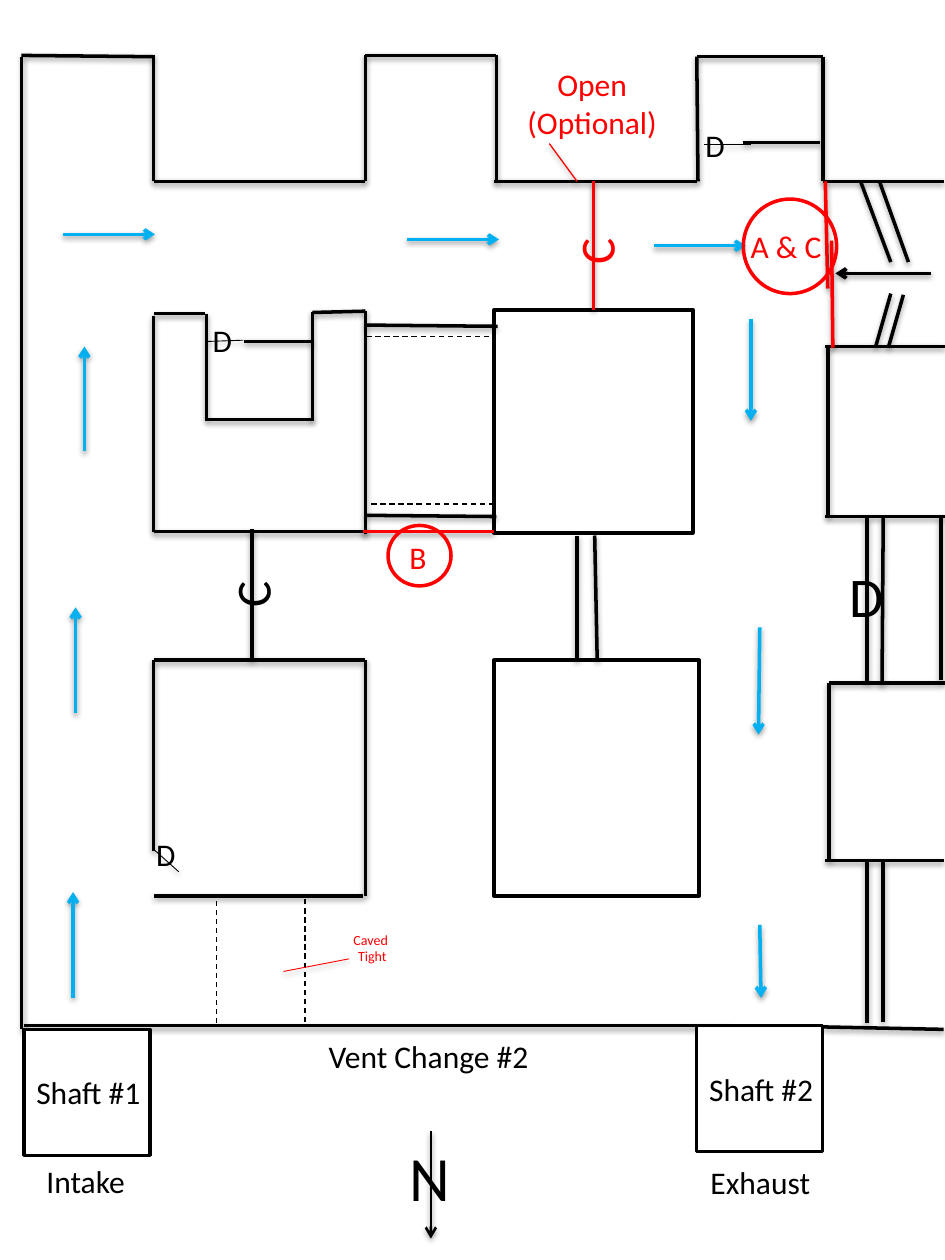
import itertools
import pptx
import pptx.util
import pptx.dml.color
import pptx.enum.dml
import pptx.enum.shapes
import pptx.enum.text
import pptx.oxml
import pptx.oxml.ns
from pptx.util import Inches

BLACK = pptx.dml.color.RGBColor(0, 0, 0)
WHITE = pptx.dml.color.RGBColor(255, 255, 255)
RED = pptx.dml.color.RGBColor(255, 0, 0)
BLUE = pptx.dml.color.RGBColor(0, 176, 240)
KIND = pptx.enum.shapes.MSO_SHAPE
ALIGN = pptx.enum.text.PP_ALIGN
NS = pptx.oxml.ns.nsdecls("a")
SHADOW = (f'<a:effectLst {NS}><a:outerShdw blurRad="40000" dist="20000" '
          'dir="5400000" rotWithShape="0"><a:srgbClr val="000000">'
          '<a:alpha val="38000"/></a:srgbClr></a:outerShdw></a:effectLst>')
PLAIN = f"<a:effectLst {NS}/>"
ARROW = f'<a:tailEnd {NS} type="arrow"/>'


class Plan:
    font = "Calibri"
    weight = 2

    def __init__(self, slide):
        self.slide = slide

    def line(self, start, end, color=BLACK, width=weight, arrow=False, dash=False):
        item = self.slide.shapes.add_connector(
            pptx.enum.shapes.MSO_CONNECTOR.STRAIGHT,
            *(Inches(n) for n in (*start, *end)))
        item.line.color.rgb = color
        item.line.width = pptx.util.Pt(width)
        if dash:
            item.line.dash_style = pptx.enum.dml.MSO_LINE.DASH
        props = item.element.spPr
        if arrow:
            props.find(pptx.oxml.ns.qn("a:ln")).append(pptx.oxml.parse_xml(ARROW))
        props.append(pptx.oxml.parse_xml(PLAIN if dash else SHADOW))

    def wall(self, *points):
        """Draw one line between each point and the next."""
        for start, end in itertools.pairwise(points):
            self.line(start, end)

    def shape(self, kind, box, color, fill=None):
        item = self.slide.shapes.add_shape(kind, *map(Inches, box))
        item.shadow.inherit = False
        if fill is None:
            item.fill.background()
        else:
            item.fill.solid()
            item.fill.fore_color.rgb = fill
        item.line.color.rgb = color
        item.line.width = pptx.util.Pt(self.weight)
        return item

    def letter(self, frame, text, size, color, align=ALIGN.LEFT):
        """Fill a text frame and format its runs."""
        frame.word_wrap = False
        frame.text = text
        for para in frame.paragraphs:
            para.alignment = align
            for run in para.runs:
                run.font.name = self.font
                run.font.size = pptx.util.Pt(size)
                run.font.color.rgb = color

    def shaft(self, left, top, text):
        item = self.shape(KIND.RECTANGLE, (left, top, 1, 1), BLACK, WHITE)
        self.letter(item.text_frame, text, 18, BLACK)
        item.text_frame.vertical_anchor = pptx.enum.text.MSO_ANCHOR.MIDDLE

    def label(self, text, box, size=18, color=BLACK, align=ALIGN.LEFT, turn=0):
        item = self.slide.shapes.add_textbox(*map(Inches, box))
        item.rotation = turn
        self.letter(item.text_frame, text, size, color, align)
        item.text_frame.auto_size = pptx.enum.text.MSO_AUTO_SIZE.SHAPE_TO_FIT_TEXT


WALLS = [
    # outer wall and upper rooms
    [(0.17, 8.17), (0.17, 0.45)],
    [(0.17, 0.44), (1.22, 0.45)],
    [(1.22, 0.44), (1.22, 1.44), (2.9, 1.44), (2.9, 0.44), (3.94, 0.44), (3.94, 1.44)],
    [(3.92, 1.44), (5.53, 1.44)],
    [(5.54, 1.44), (5.53, 0.45), (6.53, 0.45), (6.53, 1.44), (7.49, 1.44)],
    [(0.19, 8.14), (5.79, 8.14)],
    [(6.53, 8.15), (7.49, 8.17)],
    # east pillars
    [(6.55, 2.75), (7.5, 2.75)],
    [(6.57, 2.75), (6.57, 4.1)],
    [(6.55, 4.1), (7.5, 4.1)],
    [(7.5, 5.42), (6.58, 5.42), (6.58, 6.83)],
    [(6.55, 6.83), (7.49, 6.83)],
    # stoppings
    [(6.88, 6.83), (6.88, 8.12)],
    [(7.01, 6.83), (7.01, 8.11)],
    [(6.88, 4.11), (6.88, 5.42)],
    [(7.01, 4.11), (7, 5.43)],
    [(7.47, 4.1), (7.47, 5.4)],
    [(4.58, 4.25), (4.58, 5.24)],
    [(4.72, 4.25), (4.74, 5.24)],
    [(2, 4.2), (2, 5.24)],
    [(6.83, 1.44), (7.07, 2.08)],
    [(6.98, 1.44), (7.21, 2.08)],
    [(6.95, 2.75), (7.07, 2.33)],
    [(7.05, 2.76), (7.17, 2.34)],
    [(2.9, 2.58), (3.95, 2.59)],
    [(2.9, 4.09), (3.94, 4.1)],
    # notched pillar
    [(1.22, 2.49), (1.63, 2.49)],
    [(1.22, 2.51), (1.22, 4.22), (2.9, 4.22)],
    [(2.9, 4.24), (2.9, 2.47), (2.48, 2.48), (2.48, 3.34)],
    [(1.64, 2.49), (1.64, 3.34)],
    [(1.65, 3.33), (2.49, 3.33)],
    # open-cornered pillar
    [(1.22, 6.75), (1.22, 5.24), (2.9, 5.24), (2.9, 7.11)],
    [(2.88, 7.11), (1.22, 7.11)],
    # doors
    [(6.51, 1.13), (5.9, 1.13)],
    [(1.94, 2.71), (2.48, 2.71)],
]
DASHES = [
    ((3.88, 2.67), (2.88, 2.67)), ((3.92, 4), (2.92, 4)),
    ((1.72, 8.12), (1.72, 7.11)), ((2.42, 8.11), (2.42, 7.11)),
]
THIN = [
    ((5.96, 1.15), (5.59, 1.15), BLACK, 0.5),
    ((1.93, 2.7), (1.65, 2.71), BLACK, 0.5),
    ((1.23, 6.75), (1.42, 6.92), BLACK, 0.5),
    ((2.25, 7.71), (2.77, 7.61), RED, 0.5),
    ((4.36, 1.14), (4.58, 1.44), RED, 0.75),
]
CHANGES = [
    ((4.71, 1.44), (4.71, 2.46)), ((2.88, 4.22), (3.92, 4.22)),
    ((6.55, 1.44), (6.57, 2.29)), ((6.6, 1.91), (6.61, 2.76)),
]
FLOWS = [
    ((0.58, 7.92), (0.58, 7.08)), ((0.6, 5.66), (0.6, 4.82)),
    ((0.67, 3.58), (0.67, 2.75)), ((0.5, 1.86), (1.23, 1.86)),
    ((3.23, 1.9), (3.96, 1.9)), ((5.19, 1.95), (5.92, 1.95)),
    ((5.96, 2.53), (5.96, 3.34)), ((6.03, 4.98), (6.02, 5.83)),
    ((6.03, 7.34), (6.04, 7.92)),
]


def main():
    deck = pptx.Presentation()
    deck.slide_width, deck.slide_height = Inches(7.5), Inches(10)
    plan = Plan(deck.slides.add_slide(deck.slide_layouts[6]))

    for box in ((3.92, 2.46, 1.58, 1.77), (3.92, 5.24, 1.63, 1.87)):
        plan.shape(KIND.RECTANGLE, box, BLACK, WHITE)
    for points in WALLS:
        plan.wall(*points)
    plan.shaft(0.19, 8.17, "Shaft #1")
    plan.shaft(5.53, 8.14, "Shaft #2")
    for ends in DASHES:
        plan.line(*ends, width=0.75, dash=True)
    for thin in THIN:
        plan.line(*thin)
    for ends in CHANGES:
        plan.line(*ends, RED)
    for ends in FLOWS:
        plan.line(*ends, BLUE, arrow=True)
    plan.line((7.39, 2.17), (6.63, 2.17), arrow=True)
    plan.line((3.42, 8.98), (3.42, 9.83), width=1.5, arrow=True)
    for box in ((5.9, 1.58, 0.74, 0.75), (3.08, 4.17, 0.5, 0.48)):
        plan.shape(KIND.OVAL, box, RED)

    plan.label("Intake", (0.27, 9.17, 0.83, 0.4))
    plan.label("Exhaust", (5.54, 9.18, 1, 0.4))
    plan.label("Vent Change #2", (2.51, 8.18, 1.87, 0.4))
    plan.label("C", (4.48, 1.67, 0.49, 0.57), 28, RED, turn=270)
    plan.label("C", (1.79, 4.43, 0.41, 0.57), 28, turn=270)
    plan.label("D", (6.64, 4.41, 0.48, 0.64), 32)
    for left, top in ((5.5, 0.95), (1.14, 6.58), (1.59, 2.5)):
        plan.label("D", (left, top, 0.36, 0.4))
    plan.label("Caved \nTight", (2.7, 7.34, 0.51, 0.37), 8, RED, ALIGN.CENTER)
    plan.label("Open\n(Optional)", (4.08, 0.47, 1.24, 0.71), 18, RED, ALIGN.CENTER)
    plan.label("N", (3.15, 8.99, 0.53, 0.71), 36)
    plan.label("B", (3.15, 4.22, 0.34, 0.4), color=RED)
    plan.label("A & C", (5.86, 1.75, 0.77, 0.4), color=RED)
    deck.save("out.pptx")


if __name__ == "__main__":
    main()
